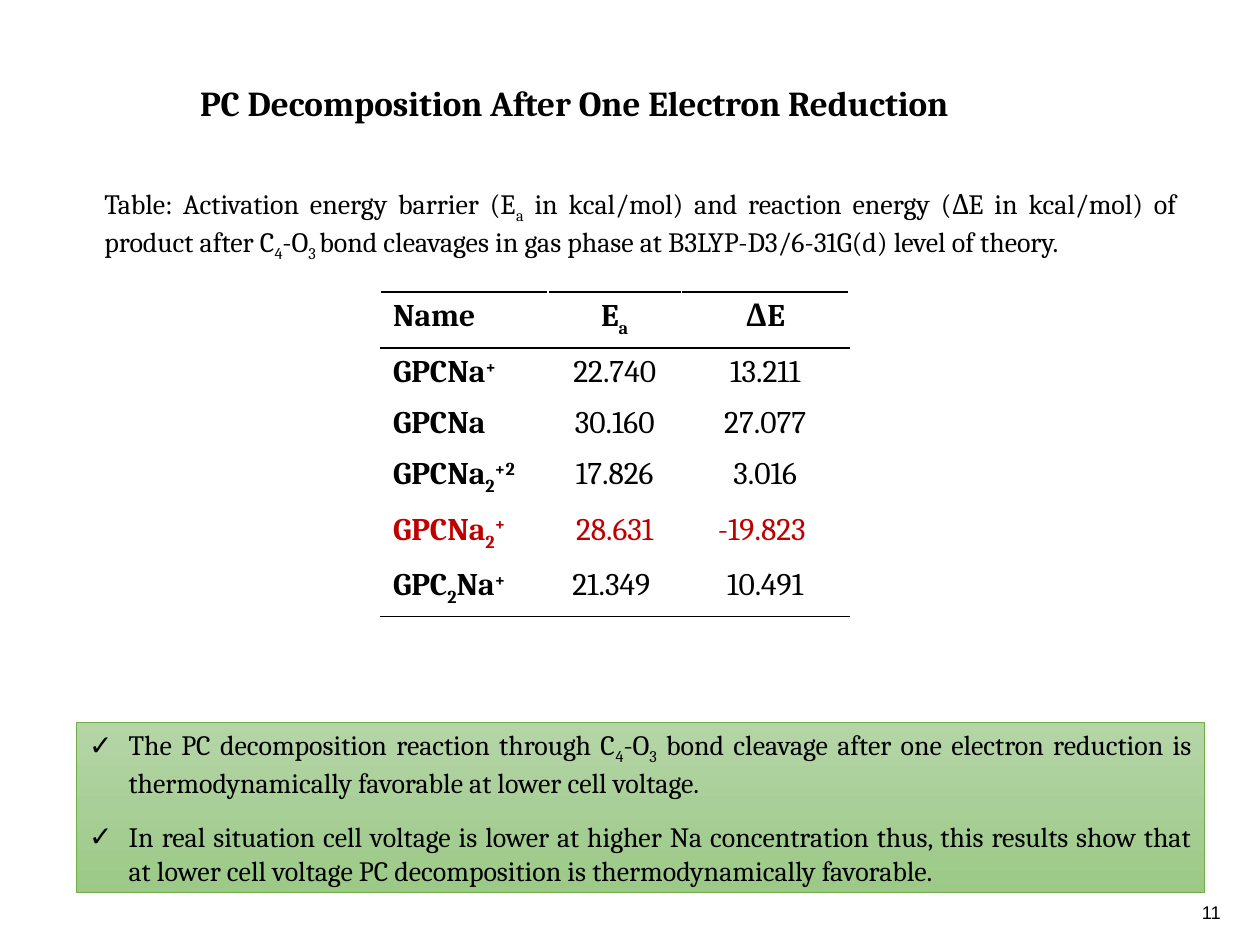
from lxml import etree
from pptx import Presentation
from pptx.dml.color import RGBColor
from pptx.enum.shapes import MSO_SHAPE
from pptx.enum.text import MSO_ANCHOR, PP_ALIGN
from pptx.oxml.ns import qn
from pptx.util import Pt

RECTANGLE = MSO_SHAPE.RECTANGLE
MIDDLE = MSO_ANCHOR.MIDDLE
LEFT, CENTER, JUSTIFY = PP_ALIGN.LEFT, PP_ALIGN.CENTER, PP_ALIGN.JUSTIFY

BLACK = RGBColor(0x00, 0x00, 0x00)
WHITE = RGBColor(0xFF, 0xFF, 0xFF)
RED = RGBColor(0xC0, 0x00, 0x00)
GREEN_TOP = RGBColor(0xB5, 0xD5, 0xA7)
GREEN_BOTTOM = RGBColor(0x9C, 0xC9, 0x87)
GREEN_LINE = RGBColor(0x70, 0xAD, 0x47)

SERIF, SANS = "Cambria", "Arial"
BASELINES = {"_": -25000, "^": 30000}  # leading mark of a sub- or superscript run

CAPTION = ["Table: Activation energy barrier (E", "_a",
           " in kcal/mol) and reaction energy (ΔE in kcal/mol) of product after C",
           "_4", "-O", "_3 ",
           "bond cleavages in gas phase at B3LYP-D3/6-31G(d) level of theory."]
HEADER = [["Name"], ["E", "_a"], ["ΔE"]]
ENERGIES = [
    (["GPCNa", "^+"], "22.740", "13.211", BLACK),
    (["GPCNa"], "30.160", "27.077", BLACK),
    (["GPCNa", "_2", "^+2"], "17.826", "3.016", BLACK),
    (["GPCNa", "_2", "^+"], "28.631", "-19.823 ", RED),
    (["GPC", "_2", "Na", "^+"], "21.349 ", "10.491", BLACK),
]
CONCLUSIONS = [
    ["The PC decomposition reaction through C", "_4", "-O", "_3",
     " bond cleavage after one electron reduction is thermodynamically"
     " favorable at lower cell voltage."],
    ["In real situation cell voltage is lower at higher Na concentration thus,"
     " this results show that at lower cell voltage PC decomposition is"
     " thermodynamically favorable."],
]


def write(paragraph, parts, size, font=SERIF, color=BLACK, bold=False, align=LEFT):
    paragraph.alignment = align
    for part in parts:
        baseline = BASELINES.get(part[0])
        run = paragraph.add_run()
        run.text = part[1:] if baseline else part
        run.font.size = Pt(size)
        run.font.name = font
        run.font.bold = bold
        run.font.color.rgb = color
        if baseline:
            run.font._element.set("baseline", str(baseline))


def add_text(slide, box, parts, size, **style):
    frame = slide.shapes.add_textbox(*map(Pt, box)).text_frame
    frame.word_wrap = True
    write(frame.paragraphs[0], parts, size, **style)


def set_borders(cell, top, bottom):
    properties = cell._tc.get_or_add_tcPr()
    sides = [("a:lnL", WHITE), ("a:lnR", WHITE), ("a:lnT", top), ("a:lnB", bottom)]
    for position, (tag, color) in enumerate(sides):
        border = etree.Element(qn(tag), w=str(Pt(1)))
        fill = etree.SubElement(border, qn("a:solidFill"))
        etree.SubElement(fill, qn("a:srgbClr"), val=str(color))
        properties.insert(position, border)


def add_energy_table(slide, box):
    rows = [(HEADER, BLACK)]
    rows += [([name, [barrier], [energy]], color)
             for name, barrier, energy, color in ENERGIES]
    table = slide.shapes.add_table(len(rows), len(HEADER), *map(Pt, box)).table
    for column, width in zip(table.columns, (95.75, 76.3, 95.75)):
        column.width = Pt(width)
    last = len(rows) - 1
    for r, (contents, color) in enumerate(rows):
        # Rules run above and below the header and under the last row
        top = BLACK if r <= 1 else WHITE
        bottom = BLACK if r in (0, last) else WHITE
        for c, parts in enumerate(contents):
            cell = table.cell(r, c)
            cell.fill.background()
            set_borders(cell, top, bottom)
            write(cell.text_frame.paragraphs[0], parts, 18, color=color,
                  bold=r == 0 or c == 0, align=CENTER if c else LEFT)


def add_check_bullet(paragraph, indent):
    properties = paragraph._p.get_or_add_pPr()
    properties.set("marL", str(Pt(indent)))
    properties.set("indent", str(-Pt(indent)))
    etree.SubElement(properties, qn("a:buFont"), typeface=SANS)
    etree.SubElement(properties, qn("a:buChar"), char="✓")


def add_conclusions(slide, box):
    panel = slide.shapes.add_shape(RECTANGLE, *map(Pt, box))
    panel.shadow.inherit = False
    panel.fill.gradient()
    panel.fill.gradient_angle = 270
    for stop, color in zip(panel.fill.gradient_stops, (GREEN_TOP, GREEN_BOTTOM)):
        stop.color.rgb = color
    panel.line.color.rgb = GREEN_LINE
    panel.line.width = Pt(0.5)

    frame = panel.text_frame
    frame.word_wrap = True
    frame.vertical_anchor = MIDDLE
    for i, parts in enumerate(CONCLUSIONS):
        paragraph = frame.add_paragraph() if i else frame.paragraphs[0]
        paragraph.space_before = paragraph.space_after = Pt(6)
        add_check_bullet(paragraph, 22.5)
        write(paragraph, parts, 16, align=JUSTIFY)


def main():
    deck = Presentation()
    deck.slide_width, deck.slide_height = Pt(720), Pt(540)
    slide = deck.slides.add_slide(deck.slide_layouts[6])

    # Title and table caption
    add_text(slide, (107.3, 43.2, 499.7, 31.7),
             ["PC Decomposition After One Electron Reduction"], 20, bold=True)
    add_text(slide, (52.6, 103, 627, 46), CAPTION, 16, align=JUSTIFY)

    # Energies, conclusions and page number
    add_energy_table(slide, (217.4, 167, 267.8, 175))
    add_conclusions(slide, (43.9, 412.6, 644.4, 97.2))
    add_text(slide, (679.7, 511.2, 27.4, 22.3), ["11"], 10.5, font=SANS)

    deck.save("out.pptx")


if __name__ == "__main__":
    main()
